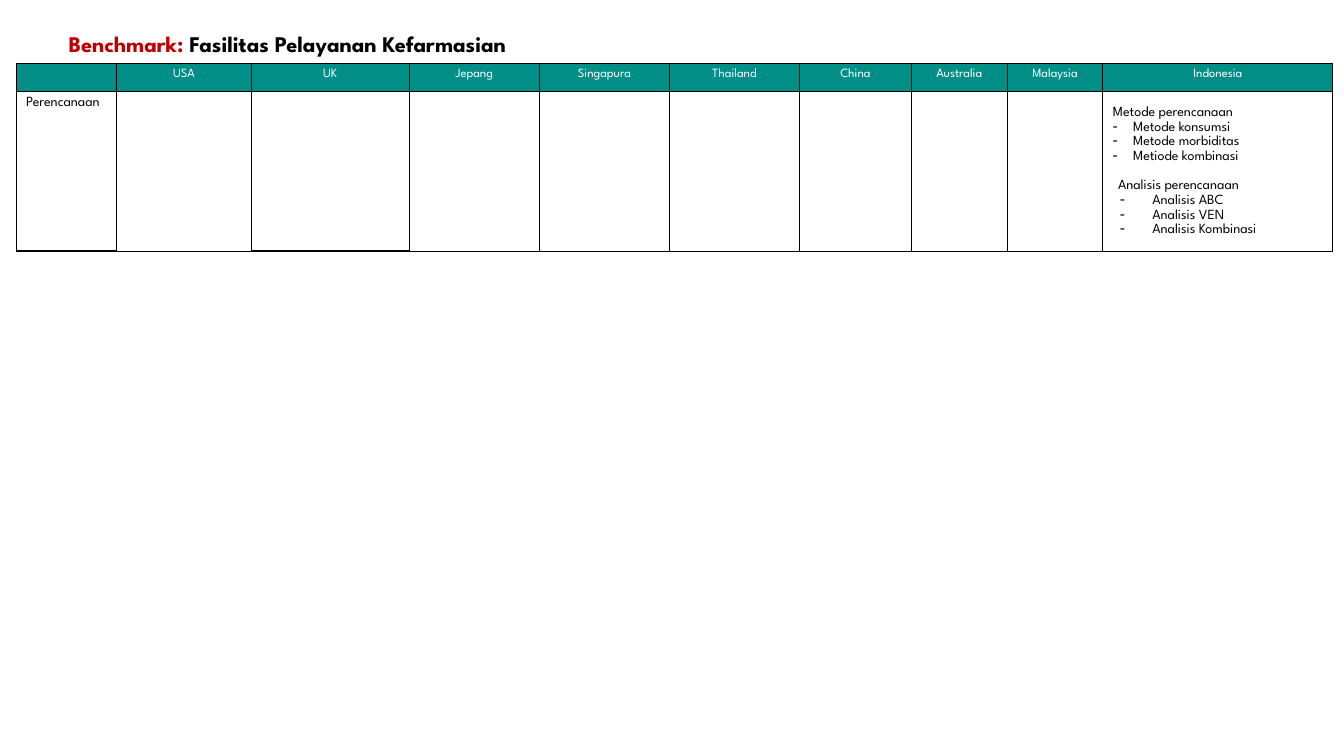
from dataclasses import dataclass

from lxml import etree
from pptx import Presentation
from pptx.dml.color import RGBColor
from pptx.enum.text import MSO_ANCHOR, MSO_AUTO_SIZE, PP_ALIGN
from pptx.oxml.ns import qn
from pptx.util import Inches, Pt

LEFT, CENTER, JUSTIFY = PP_ALIGN.LEFT, PP_ALIGN.CENTER, PP_ALIGN.JUSTIFY
MIDDLE = MSO_ANCHOR.MIDDLE
NO_AUTOFIT = MSO_AUTO_SIZE.NONE

COLORS = {"teal": "008E87", "red": "C00000", "black": "000000", "white": "FFFFFF"}
FONT = "League Spartan"
THIN, HEAVY = 0.75, 1
HEAVY_COLUMNS = (0, 2)
TITLE_ONLY = 5


@dataclass
class Column:
    name: str
    width: float


@dataclass
class Line:
    text: str
    indent: float = 0
    hanging: float = 0
    before: float = 0
    align: PP_ALIGN = JUSTIFY


COLUMNS = [
    Column("", 1), Column("USA", 1.33), Column("UK", 1.57),
    Column("Jepang", 1.29), Column("Singapura", 1.29), Column("Thailand", 1.29),
    Column("China", 1.11), Column("Australia", 0.95), Column("Malaysia", 0.95),
    Column("Indonesia", 2.28),
]
ROW_HEIGHTS = (0.28, 1.58)

METHODS = ("Metode konsumsi", "Metode morbiditas", "Metiode kombinasi")
ANALYSES = ("Analisis ABC", "Analisis VEN", "Analisis Kombinasi")
PLANNING = [
    Line("Metode perencanaan"),
    *(Line(text, 0.2, 0.2) for text in METHODS),
    Line("Analisis perencanaan", 0.05, before=10.5, align=LEFT),
    *(Line(text, 0.39, 0.32) for text in ANALYSES),
]


def format_font(font, size: float, color: str, bold: bool = False) -> None:
    for name, value in {"name": FONT, "size": Pt(size), "bold": bold}.items():
        setattr(font, name, value)
    font.color.rgb = RGBColor.from_string(COLORS[color])


def add_run(p, text: str, size: float, color: str, bold: bool = False) -> None:
    r = p.add_run()
    r.text = text
    format_font(r.font, size, color, bold)


def set_margins(tf, side: float, vertical: float) -> None:
    for name, value in {"margin_left": side, "margin_right": side,
                        "margin_top": vertical, "margin_bottom": vertical}.items():
        setattr(tf, name, Inches(value))


def add_title(s) -> None:
    title = s.shapes.title
    for name, value in {"left": 0.58, "top": 0.26, "width": 12.76, "height": 0.38}.items():
        setattr(title, name, Inches(value))
    tf = title.text_frame
    tf.auto_size, tf.vertical_anchor, tf.word_wrap = NO_AUTOFIT, MIDDLE, True
    set_margins(tf, 0.1, 0.05)
    p = tf.paragraphs[0]
    p.alignment, p.line_spacing = LEFT, 0.9
    add_run(p, "Benchmark: ", 16, "red", True)
    add_run(p, "Fasilitas Pelayanan Kefarmasian", 16, "black", True)


def set_borders(cell, row: int, col: int) -> None:
    """Heavy lines run along the table's left and top and above and below HEAVY_COLUMNS."""
    level = HEAVY if col in HEAVY_COLUMNS else THIN
    widths = {
        "a:lnL": HEAVY if col == 0 else THIN,
        "a:lnR": THIN,
        "a:lnT": HEAVY if row == 0 else level,
        "a:lnB": level,
    }
    tc_pr = cell._tc.get_or_add_tcPr()
    for tag, width in widths.items():
        ln = etree.SubElement(tc_pr, qn(tag), w=str(Pt(width)))
        fill = etree.SubElement(ln, qn("a:solidFill"))
        etree.SubElement(fill, qn("a:srgbClr"), val=COLORS["black"])


def format_cell(cell, row: int, col: int) -> None:
    set_borders(cell, row, col)
    cell.fill.solid()
    cell.fill.fore_color.rgb = RGBColor.from_string(COLORS["white" if row else "teal"])
    set_margins(cell, 0.1, 0.05)


def add_lines(cell, lines: list[Line]) -> None:
    set_margins(cell, 0.1, 0.13)
    tf = cell.text_frame
    for i, line in enumerate(lines):
        p = tf.add_paragraph() if i else tf.paragraphs[0]
        p.alignment, p.line_spacing = line.align, 1.15
        if line.before:
            p.space_before = Pt(line.before)
        p_pr = p._p.get_or_add_pPr()
        p_pr.set("marL", str(Inches(line.indent)))
        p_pr.set("indent", str(Inches(-line.hanging)))
        if line.hanging:
            color = etree.SubElement(p_pr, qn("a:buClr"))
            etree.SubElement(color, qn("a:srgbClr"), val=COLORS["black"])
            etree.SubElement(p_pr, qn("a:buChar"), char="-")
        add_run(p, line.text, 10, "black")


def add_benchmark_table(s) -> None:
    width = sum(column.width for column in COLUMNS)
    table = s.shapes.add_table(len(ROW_HEIGHTS), len(COLUMNS), Inches(0.16), Inches(0.63),
                               Inches(width), Inches(sum(ROW_HEIGHTS))).table
    table.first_row = table.horz_banding = False
    for row, height in enumerate(ROW_HEIGHTS):
        table.rows[row].height = Inches(height)
    for col, column in enumerate(COLUMNS):
        table.columns[col].width = Inches(column.width)
        for row in range(len(ROW_HEIGHTS)):
            format_cell(table.cell(row, col), row, col)
        p = table.cell(0, col).text_frame.paragraphs[0]
        p.alignment = CENTER
        if column.name:
            add_run(p, column.name, 9, "white")
        else:
            etree.SubElement(p._p, qn("a:endParaRPr"), sz="900")
    add_run(table.cell(1, 0).text_frame.paragraphs[0], "Perencanaan", 10, "black")
    add_lines(table.cell(1, len(COLUMNS) - 1), PLANNING)


def main() -> None:
    prs = Presentation()
    prs.slide_width, prs.slide_height = Inches(13.33), Inches(7.5)
    s = prs.slides.add_slide(prs.slide_layouts[TITLE_ONLY])
    add_benchmark_table(s)
    add_title(s)
    prs.save("out.pptx")


if __name__ == "__main__":
    main()
